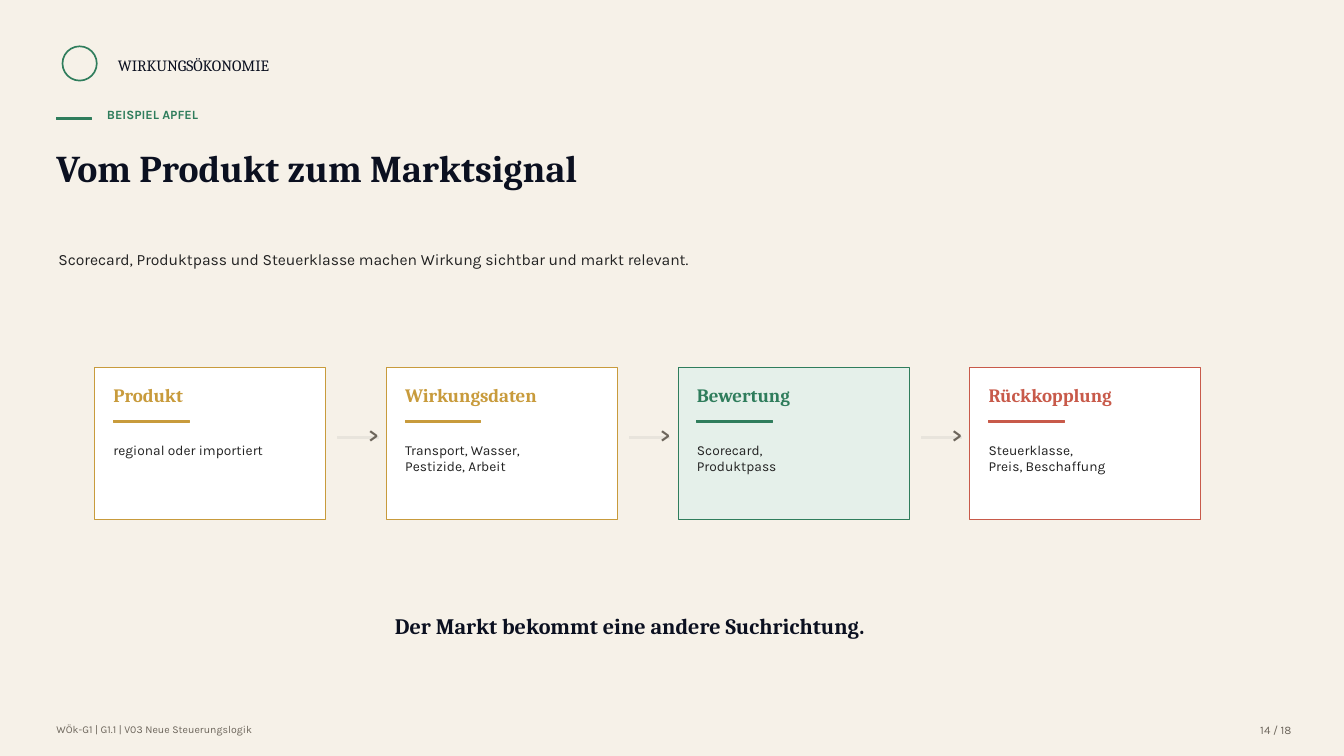
from dataclasses import dataclass

from pptx import Presentation
from pptx import util as u
from pptx.dml import color
from pptx.enum import shapes, text


@dataclass(frozen=True)
class Theme:
    paper: str = "F6F1E8"
    ink: str = "0B1020"
    body: str = "222222"
    muted: str = "6C655B"
    shaft: str = "E8E4DC"
    white: str = "FFFFFF"
    mint: str = "E5F0EA"
    green: str = "2F7D5C"
    gold: str = "C89B3C"
    red: str = "C85A4A"
    serif: str = "Cambria"
    sans: str = "Karla"
    title_size: float = 27
    claim_size: float = 15.8
    card_title_size: float = 13.5
    lead_size: float = 11.2
    card_body_size: float = 9.8
    kicker_size: float = 9
    page_size: float = 8.2
    footer_size: float = 7.5


THEME = Theme()
LEFT, CENTER, RIGHT = text.PP_ALIGN.LEFT, text.PP_ALIGN.CENTER, text.PP_ALIGN.RIGHT
BAR_HEIGHT = 0.02

STEPS = [
    ("Produkt", ["regional oder importiert"], THEME.gold, THEME.white),
    ("Wirkungsdaten", ["Transport, Wasser,", "Pestizide, Arbeit"], THEME.gold, THEME.white),
    ("Bewertung", ["Scorecard,", "Produktpass"], THEME.green, THEME.mint),
    ("Rückkopplung", ["Steuerklasse,", "Preis, Beschaffung"], THEME.red, THEME.white),
]


def rgb(value):
    return color.RGBColor.from_string(value)


def inches(box):
    return [u.Inches(length) for length in box]


def add_block(slide, box, fill, line, line_width=0, kind=shapes.MSO_SHAPE.RECTANGLE):
    """Draw a flat preset shape; fill None leaves it hollow."""
    block = slide.shapes.add_shape(kind, *inches(box))
    block.shadow.inherit = False
    if fill is None:
        block.fill.background()
    else:
        block.fill.solid()
        block.fill.fore_color.rgb = rgb(fill)
    block.line.color.rgb = rgb(line)
    block.line.width = u.Pt(line_width)


def add_bar(slide, left, top, width, tint):
    add_block(slide, (left, top, width, BAR_HEIGHT), tint, tint)


def add_text(slide, box, lines, size, tint, family, bold=False, align=LEFT):
    """Add a text box without insets, one paragraph per line."""
    frame = slide.shapes.add_textbox(*inches(box)).text_frame
    frame.word_wrap = True
    frame.margin_left = frame.margin_right = frame.margin_top = frame.margin_bottom = 0
    for number, line in enumerate(lines):
        paragraph = frame.add_paragraph() if number else frame.paragraphs[0]
        paragraph.alignment = align
        run = paragraph.add_run()
        run.text = line
        run.font.size = u.Pt(size)
        run.font.name = family
        run.font.bold = bold
        run.font.color.rgb = rgb(tint)


def add_header(slide, left, top, width):
    add_block(slide, (left + 0.06, top, 0.34, 0.34), None, THEME.green, 1.2,
              shapes.MSO_SHAPE.OVAL)
    add_text(slide, (left + 0.61, top + 0.09, 2.6, 0.23), ["WIRKUNGSÖKONOMIE"],
             THEME.lead_size, THEME.ink, THEME.serif)
    add_bar(slide, left, top + 0.71, 0.35, THEME.green)
    add_text(slide, (left + 0.5, top + 0.6, 4.79, 0.25), ["BEISPIEL APFEL"],
             THEME.kicker_size, THEME.green, THEME.sans, bold=True)
    add_text(slide, (left, top + 0.98, width, 0.94), ["Vom Produkt zum Marktsignal"],
             THEME.title_size, THEME.ink, THEME.serif, bold=True)
    add_text(slide, (left + 0.02, top + 2.02, 8.75, 0.44),
             ["Scorecard, Produktpass und Steuerklasse machen Wirkung sichtbar "
              "und markt relevant."],
             THEME.lead_size, THEME.body, THEME.sans)


def add_card(slide, box, heading, details, accent, fill):
    left, top, width, _ = box
    inner_left, inner_width = left + 0.185, width - 0.37
    add_block(slide, box, fill, accent, 0.75)
    add_text(slide, (inner_left, top + 0.16, inner_width, 0.25), [heading],
             THEME.card_title_size, accent, THEME.serif, bold=True)
    add_bar(slide, inner_left, top + 0.52, 0.75, accent)
    add_text(slide, (inner_left, top + 0.73, inner_width, 0.6), details,
             THEME.card_body_size, THEME.body, THEME.sans)


def add_step_arrow(slide, left, top):
    add_bar(slide, left, top + 0.13, 0.4, THEME.shaft)
    add_text(slide, (left + 0.23, top, 0.25, 0.25), [">"],
             THEME.card_title_size, THEME.muted, THEME.sans, bold=True, align=CENTER)


def add_process(slide, left, top, width, height, card_width=2.29):
    """Spread the step cards evenly over the box, with an arrow in each gap."""
    pitch = (width - card_width) / (len(STEPS) - 1)
    for index, step in enumerate(STEPS):
        card_left = left + index * pitch
        if index:
            add_step_arrow(slide, card_left - pitch + card_width + 0.12, top + 0.55)
        add_card(slide, (card_left, top, card_width, height), *step)


def add_claim(slide, box):
    add_text(slide, box, ["Der Markt bekommt eine andere Suchrichtung."],
             THEME.claim_size, THEME.ink, THEME.serif, bold=True, align=CENTER)


def add_footer(slide, left, top, width, height):
    page_width = 0.73
    add_text(slide, (left, top, 5.83, height), ["WÖk-G1 | G1.1 | V03 Neue Steuerungslogik"],
             THEME.footer_size, THEME.muted, THEME.sans)
    add_text(slide, (left + width - page_width, top, page_width, height), ["14 / 18"],
             THEME.page_size, THEME.muted, THEME.sans, align=RIGHT)


def main():
    deck = Presentation()
    deck.slide_width, deck.slide_height = u.Inches(13.33), u.Inches(7.5)
    slide = deck.slides.add_slide(deck.slide_layouts[6])
    slide.background.fill.solid()
    slide.background.fill.fore_color.rgb = rgb(THEME.paper)

    add_header(slide, 0.56, 0.46, 9.69)
    add_process(slide, 0.94, 3.65, 10.97, 1.5)
    add_claim(slide, (3.54, 6.08, 5.42, 0.25))
    add_footer(slide, 0.56, 7.17, 12.25, 0.19)
    deck.save("out.pptx")


if __name__ == "__main__":
    main()
